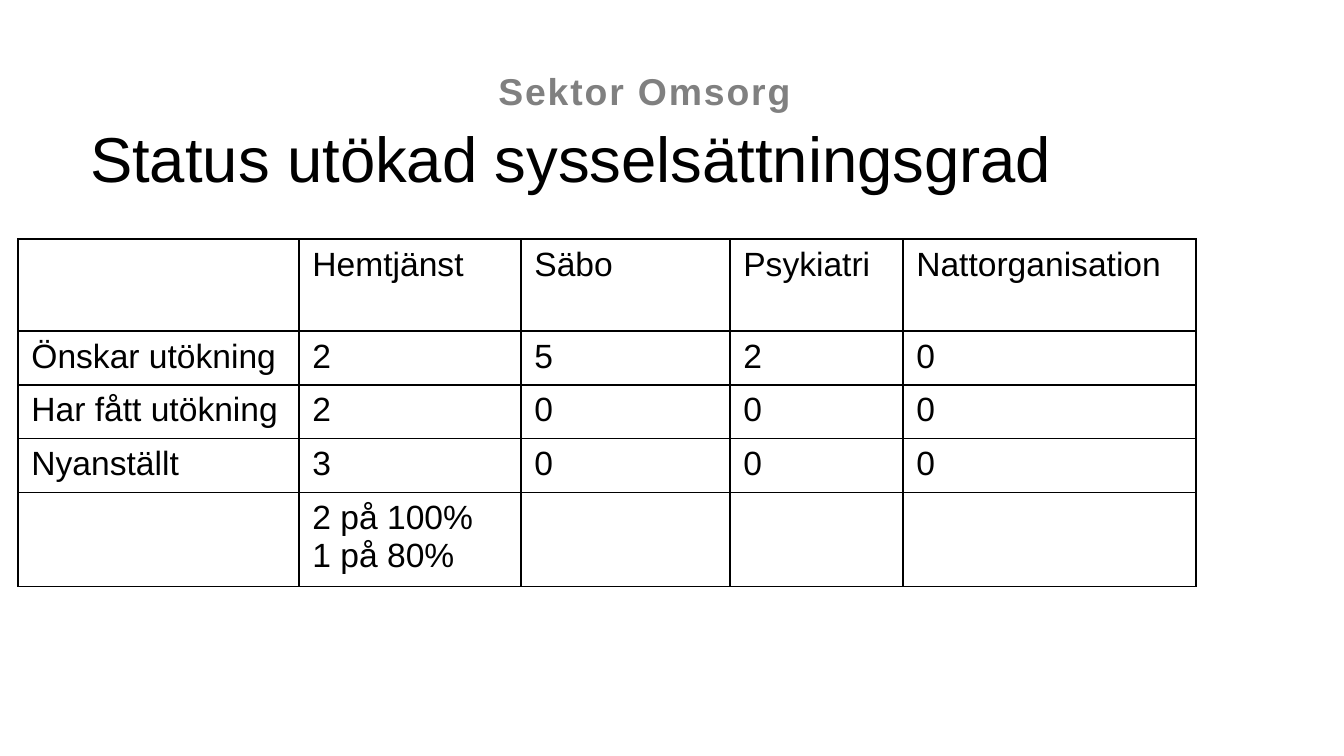
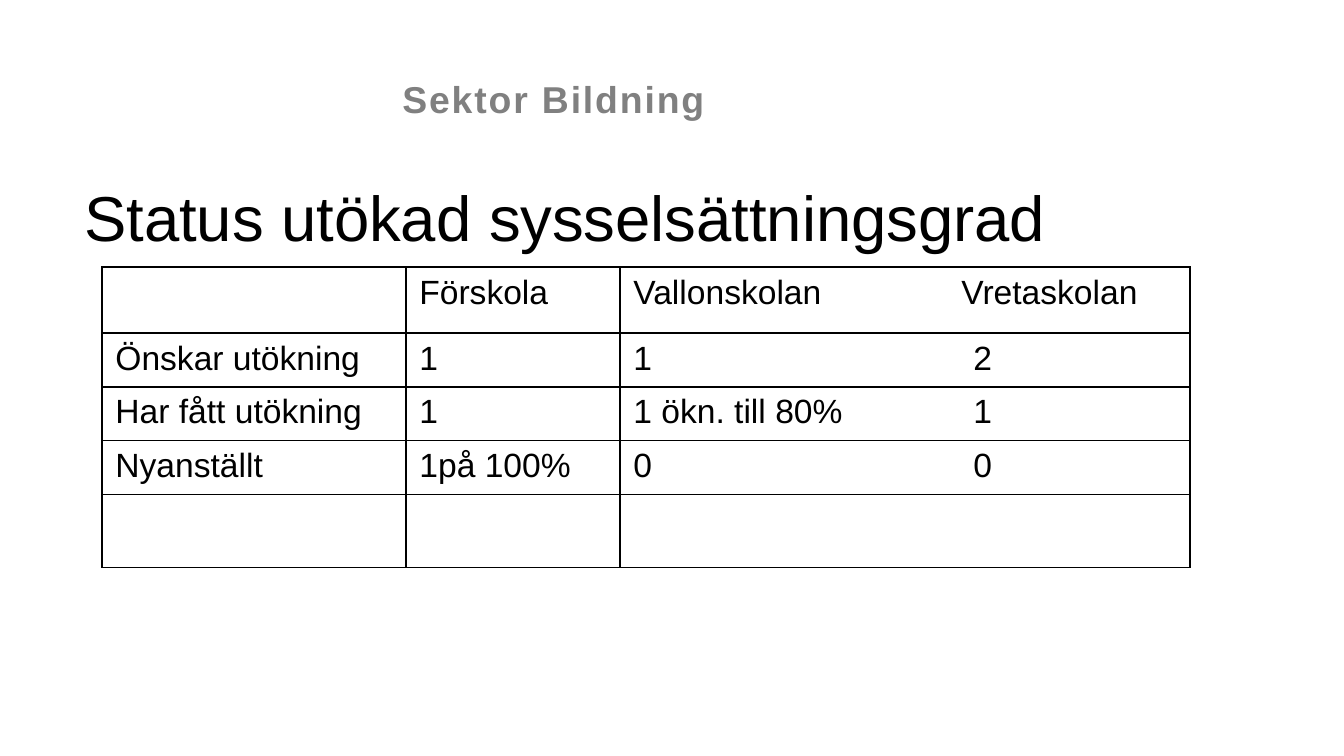
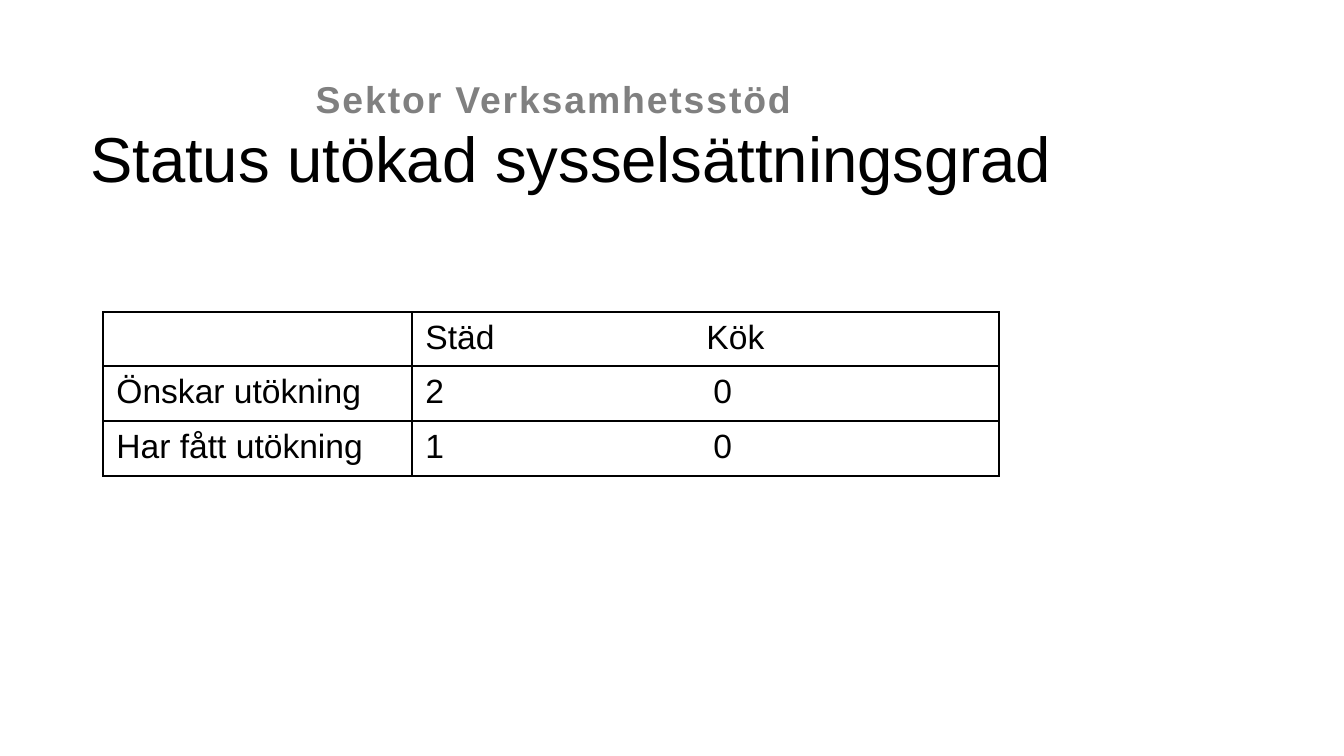
from lxml.etree import SubElement
from pptx import Presentation
from pptx.dml.color import RGBColor
from pptx.enum.text import PP_ALIGN
from pptx.oxml import parse_xml
from pptx.oxml.ns import nsdecls, qn
from pptx.util import Emu, Pt

EMU_PER_PX = 914400 / 134.4
FONT = "Arial"
COLOURS = {"text": "000000", "sector": "808080", "border": "000000"}
TITLE = "Status utökad sysselsättningsgrad"
WISHES, GRANTED, HIRED = "Önskar utökning", "Har fått utökning", "Nyanställt"


def px(length):
    """Turn pixels into EMU."""
    return Emu(round(length * EMU_PER_PX))


def style(para, size, colour, bold=False):
    """Set the font of a whole paragraph."""
    para.font.name = FONT
    para.font.size = Pt(size)
    para.font.bold = bold
    para.font.color.rgb = RGBColor.from_string(COLOURS[colour])


def add_line(page, box, text, inset_top):
    """Add a one-line text box and return its paragraph."""
    frame = page.shapes.add_textbox(*map(px, box)).text_frame
    frame.word_wrap = True
    frame.margin_top = px(inset_top)
    frame.margin_bottom = 0
    frame.text = text
    return frame.paragraphs[0]


def add_sector(page, box, name):
    """Add the grey, letter-spaced sector name."""
    para = add_line(page, box, name, 9)
    para.alignment = PP_ALIGN.CENTER
    style(para, 20, "sector", bold=True)
    para._p.pPr.find(qn("a:defRPr")).set("spc", "100")
    para.runs[0]._r.get_or_add_rPr().set("spc", "100")


def add_title(page, box):
    """Add the title that all slides share."""
    style(add_line(page, box, TITLE, 14), 34, "text")


def add_tab(para, position):
    """Give a paragraph one left tab stop."""
    tabs = SubElement(para._p.get_or_add_pPr(), qn("a:tabLst"))
    SubElement(tabs, qn("a:tab"), pos=str(px(position)), algn="l")


def add_borders(cell):
    """Draw a thin line on each side of a cell."""
    properties = cell._tc.get_or_add_tcPr()
    for index, side in enumerate("LRTB"):
        properties.insert(index, parse_xml(
            f'<a:ln{side} {nsdecls("a")} w="12700"><a:solidFill>'
            f'<a:srgbClr val="{COLOURS["border"]}"/></a:solidFill></a:ln{side}>'))


def add_status_table(page, corner, widths, heights, rows, tabs=(0, 0)):
    """Add a plain grid, with tab stops for the header and the value rows."""
    box = (*corner, sum(widths), sum(heights))
    table = page.shapes.add_table(len(heights), len(widths), *map(px, box)).table
    table.first_row = table.horz_banding = False
    for column, width in zip(table.columns, widths):
        column.width = px(width)
    for row_index, (row, height) in enumerate(zip(table.rows, heights)):
        row.height = px(height)
        for cell, text in zip(row.cells, rows[row_index]):
            cell.fill.background()
            add_borders(cell)
            cell.text = text
            for para in cell.text_frame.paragraphs:
                if "\t" in text:
                    add_tab(para, tabs[min(row_index, 1)])
                style(para, 18, "text")


def add_care(page):
    """Build the slide of the care sector."""
    add_sector(page, (172, 59, 945, 31), "Sektor Omsorg")
    add_title(page, (77, 105, 1188, 67))
    add_status_table(page, (18, 239), (281, 222, 209, 173, 293), (92, 52, 52, 52, 92), [
        ("", "Hemtjänst", "Säbo", "Psykiatri", "Nattorganisation"),
        (WISHES, "2", "5", "2", "0"),
        (GRANTED, "2", "0", "0", "0"),
        (HIRED, "3", "0", "0", "0"),
        ("", "2 på 100%\n1 på 80%", "", "", ""),
    ])


def add_education(page):
    """Build the slide of the education sector."""
    add_sector(page, (81, 67, 945, 31), "Sektor Bildning")
    add_title(page, (71, 164, 1150, 67))
    add_status_table(page, (102, 267), (304, 214, 570), (66, 52, 52, 52, 73), [
        ("", "Förskola", "Vallonskolan\tVretaskolan"),
        (WISHES, "1", "1\t2"),
        (GRANTED, "1", "1 ökn. till 80%\t1"),
        (HIRED, "1på 100%", "0\t0"),
        ("", "", ""),
    ], tabs=(328, 340))


def add_support(page):
    """Build the slide of the support sector."""
    add_sector(page, (81, 67, 945, 31), "Sektor Verksamhetsstöd")
    add_title(page, (77, 105, 1203, 67))
    add_status_table(page, (103, 312), (309, 587), (54, 55, 55), [
        ("", "Städ\tKök"),
        (WISHES, "2\t0"),
        (GRANTED, "1\t0"),
    ], tabs=(281, 288))


def main():
    """Build and save the deck."""
    deck = Presentation()
    deck.slide_width, deck.slide_height = px(1344), px(756)
    for build in (add_care, add_education, add_support):
        build(deck.slides.add_slide(deck.slide_layouts[6]))
    deck.save("out.pptx")


if __name__ == "__main__":
    main()
